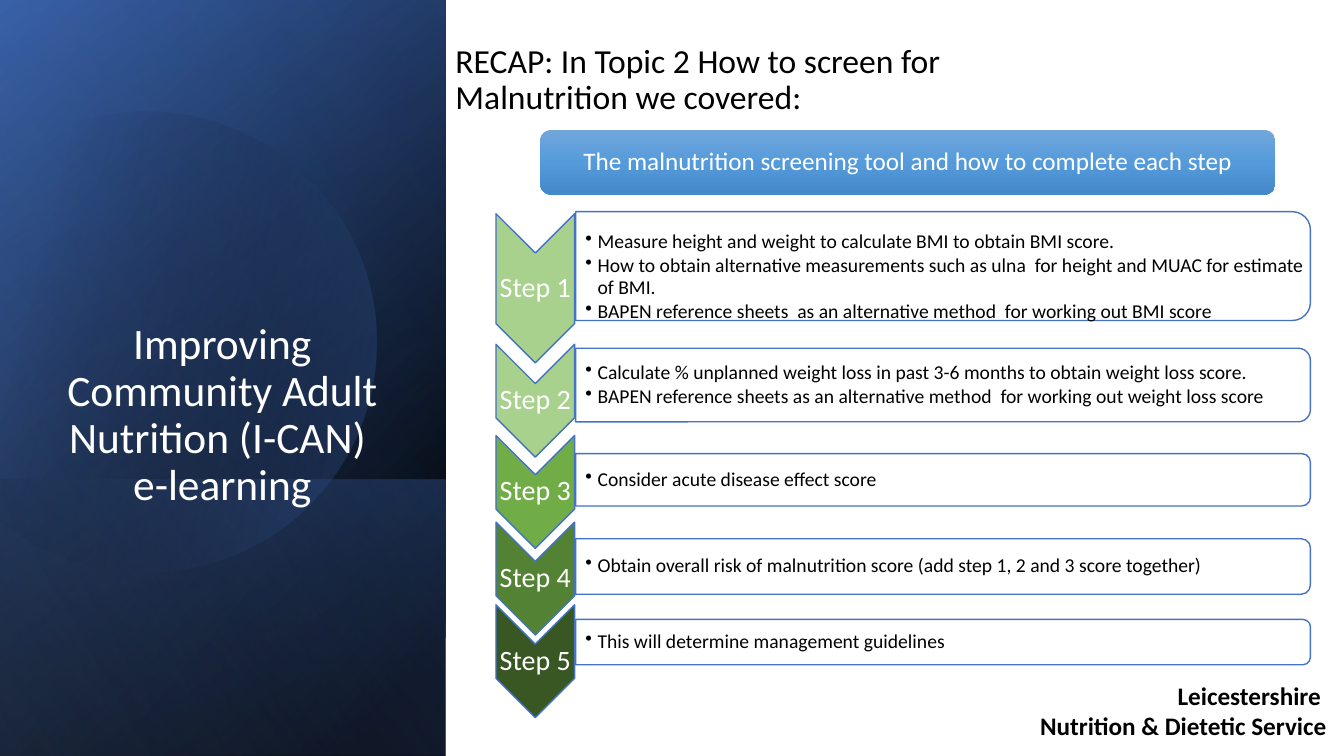
from dataclasses import dataclass
from math import cos, radians, sin

from pptx import Presentation
from pptx.dml.color import RGBColor
from pptx.enum.shapes import MSO_SHAPE as Preset
from pptx.enum.text import MSO_ANCHOR as Anchor, PP_ALIGN as Align
from pptx.oxml import parse_xml
from pptx.oxml.ns import nsdecls, qn
from pptx.util import Inches, Pt

CELL = Inches(0.1)  # side of one square of the layout grid
COLUMNS, ROWS = 133.33, 75
PANEL_SHARE = 0.33  # share of the slide's width taken by the dark panel
PANEL_COLUMNS = COLUMNS * PANEL_SHARE + 0.2


@dataclass(frozen=True)
class Theme:
    font: str = "Calibri"
    white: str = "FFFFFF"
    black: str = "000000"
    accent: str = "4472C4"
    navy: str = "2F5597"
    haze: str = "8FAADC"
    banner: tuple = ((0, "71A6DB", 100), (50, "559BDB", 100), (100, "448ACA", 100))
    greens: tuple = ("A9D18E", "A9D18E", "70AD47", "548235", "385723")
    course: int = 31
    heading: int = 24
    step: int = 20
    label: int = 18
    body: int = 14


THEME = Theme()


@dataclass(frozen=True)
class Box:
    """A rectangle in grid columns and rows."""
    left: float
    top: float
    width: float
    height: float

    def inner(self, left, top, width, height):
        return Box(self.left + left, self.top + top, width, height)

    def turned(self):
        """The box that covers this one after a quarter turn."""
        shift = (self.width - self.height) / 2
        return Box(self.left + shift, self.top - shift, self.height, self.width)

    def emu(self):
        return [round(n * CELL) for n in (self.left, self.top, self.width, self.height)]


# Middle row and height of the chevron, then of the bar, and the bullets
STEPS = (
    (28.6, 14.8, 26.4, 10.8, (
        "Measure height and weight to calculate BMI to obtain BMI score.",
        "How to obtain alternative measurements such as ulna  for height and MUAC for estimate of BMI.",
        "BAPEN reference sheets  as an alternative method  for working out BMI score")),
    (39.75, 11.2, 38.2, 7.3, (
        "Calculate % unplanned weight loss in past 3-6 months to obtain weight loss score.",
        "BAPEN reference sheets as an alternative method  for working out weight loss score")),
    (48.8, 11.2, 47.6, 5.2, ("Consider acute disease effect score",)),
    (57.4, 11.2, 56.2, 5.5, (
        "Obtain overall risk of malnutrition score (add step 1, 2 and 3 score together)",)),
    (65.6, 11.2, 63.7, 4.5, ("This will determine management guidelines",)),
)


def color(code):
    return RGBColor.from_string(code)


def fill_gradient(shape, stops, angle):
    """Stops are (position, colour, opacity), all in percent."""
    marks = "".join(
        f'<a:gs pos="{place * 1000}"><a:srgbClr val="{code}">'
        f'<a:alpha val="{opacity * 1000}"/></a:srgbClr></a:gs>'
        for place, code, opacity in stops)
    shape.fill.background()
    blank = shape.element.spPr.find(qn("a:noFill"))
    blank.getparent().replace(blank, parse_xml(
        f'<a:gradFill {nsdecls("a")} rotWithShape="1"><a:gsLst>{marks}</a:gsLst>'
        f'<a:lin ang="{angle * 60000}" scaled="0"/></a:gradFill>'))


def add_shape(slide, preset, box, turn=False):
    shape = slide.shapes.add_shape(preset, *(box.turned() if turn else box).emu())
    shape.rotation = 90 if turn else 0
    shape.shadow.inherit = False
    shape.line.fill.background()
    return shape


def add_outlined(slide, preset, box, code):
    shape = add_shape(slide, preset, box, turn=True)
    shape.fill.solid()
    shape.fill.fore_color.rgb = color(code)
    shape.line.color.rgb = color(THEME.accent)
    shape.line.width = Pt(1)


def write(shape, lines, size, code, align=Align.LEFT, anchor=Anchor.MIDDLE,
          insets=(1, 0.5, 1, 0.5), spacing=0.9, bold=False, bullets=False):
    frame = shape.text_frame
    frame.word_wrap = True
    frame.vertical_anchor = anchor
    (frame.margin_left, frame.margin_top,
     frame.margin_right, frame.margin_bottom) = [round(n * CELL) for n in insets]
    frame.text = "\n".join(lines)
    for para in frame.paragraphs:
        para.alignment = align
        para.line_spacing = spacing
        para.space_before = Pt(0)
        if bullets:
            para.space_after = Pt(2.1)
            props = para._p.get_or_add_pPr()
            props.set("marL", str(round(1.2 * CELL)))
            props.set("indent", str(round(-1.2 * CELL)))
            props.append(parse_xml(f'<a:buChar {nsdecls("a")} char="•"/>'))
        for run in para.runs:
            run.font.name = THEME.font
            run.font.size = Pt(size)
            run.font.bold = bold
            run.font.color.rgb = color(code)


def add_text(slide, box, *args, **options):
    write(slide.shapes.add_textbox(*box.emu()), *args, **options)


def add_panel_layer(slide, box, stops, angle):
    layer = add_shape(slide, Preset.RECTANGLE, box, turn=True)
    layer.element.spPr.xfrm.set("flipH", "1")
    fill_gradient(layer, stops, angle)


def add_disc(slide, box):
    """A tilted disc with its left side cut off along the slide's edge."""
    center_x, center_y, radius = box.left + 14.4, box.top + 33.45, 22.85
    points = [((center_x + radius * cos(radians(a))) * CELL,
               (center_y + radius * sin(radians(a))) * CELL)
              for a in range(-118, 152, 3)]
    builder = slide.shapes.build_freeform(*points[0])
    builder.add_line_segments(points[1:], close=True)
    disc = builder.convert_to_shape()
    disc.rotation = 343.9
    disc.shadow.inherit = False
    disc.line.fill.background()
    fill_gradient(disc, ((29, THEME.black, 0), (100, THEME.accent, 43)), 30)


def build_course_panel(slide, box):
    black, accent = THEME.black, THEME.accent
    add_panel_layer(slide, box, ((8, black, 100), (100, THEME.navy, 100)), 50)
    add_panel_layer(slide, box, ((0, black, 0), (99, accent, 46)), 30)
    add_panel_layer(slide, box.inner(0, 47.6, box.width, 27.4),
                    ((2, accent, 29), (100, black, 30)), 130)
    add_disc(slide, box)
    add_panel_layer(slide, box, ((0, black, 0), (99, THEME.haze, 11)), 120)

    title = slide.shapes.title
    title.element.getparent().append(title.element)  # bring in front of the panel
    title.left, title.top, title.width, title.height = box.inner(5, 24.9, 34.1, 26.2).emu()
    write(title, ["Improving Community Adult Nutrition (I-CAN) \ve-learning"],
          THEME.course, THEME.white, Align.CENTER, Anchor.BOTTOM)


def build_heading(slide, box):
    add_text(slide, box.inner(0, 0.8, 62.9, 11.3),
             ["RECAP: In Topic 2 How to screen for Malnutrition we covered:"],
             THEME.heading, THEME.black, anchor=Anchor.BOTTOM)
    banner = add_shape(slide, Preset.ROUNDED_RECTANGLE, box.inner(9.4, 12.9, 72.9, 6.4))
    fill_gradient(banner, THEME.banner, 90)
    write(banner, ["The malnutrition screening tool and how to complete each step"],
          THEME.label, THEME.white, Align.CENTER, insets=(0.7,) * 4)


def build_steps(slide, box):
    for number, (step, green) in enumerate(zip(STEPS, THEME.greens), 1):
        arrow_middle, arrow_height, bar_middle, bar_height, bullets = step
        arrow = box.inner(0, arrow_middle - arrow_height / 2, 7.8, arrow_height)
        add_outlined(slide, Preset.CHEVRON, arrow, green)
        add_text(slide, box.inner(0, arrow_middle - 1.7, 7.8, 3.4), [f"Step {number}"],
                 THEME.step, THEME.white, Align.CENTER, insets=(0.1,) * 4)
        bar = box.inner(7.9, bar_middle - bar_height / 2, 72.9, bar_height)
        add_outlined(slide, Preset.ROUND_2_SAME_RECTANGLE, bar, THEME.white)
        crowded = len(bullets) > 2
        add_text(slide, bar.inner(0, 0.4, 72.6, bar_height - 0.8), bullets,
                 THEME.body, THEME.black, bullets=True,
                 anchor=Anchor.TOP if crowded else Anchor.MIDDLE,
                 insets=(1, 1.6 if crowded else 0.1, 0.1, 0.1))


def build_signature(slide, box):
    add_text(slide, box, ["Leicestershire ", "Nutrition & Dietetic Service"],
             THEME.label, THEME.black, Align.RIGHT, Anchor.TOP, spacing=1, bold=True)


def main():
    deck = Presentation()
    deck.slide_width, deck.slide_height = round(COLUMNS * CELL), ROWS * CELL
    slide = deck.slides.add_slide(deck.slide_layouts.get_by_name("Title Only"))
    build_course_panel(slide, Box(0, 0, PANEL_COLUMNS, ROWS))
    build_heading(slide, Box(PANEL_COLUMNS, 0, COLUMNS - PANEL_COLUMNS, 20))
    build_steps(slide, Box(49.2, 0, 80.8, ROWS))
    build_signature(slide, Box(50.3, 67, 82.3, 7.1))
    deck.save("out.pptx")


if __name__ == "__main__":
    main()
